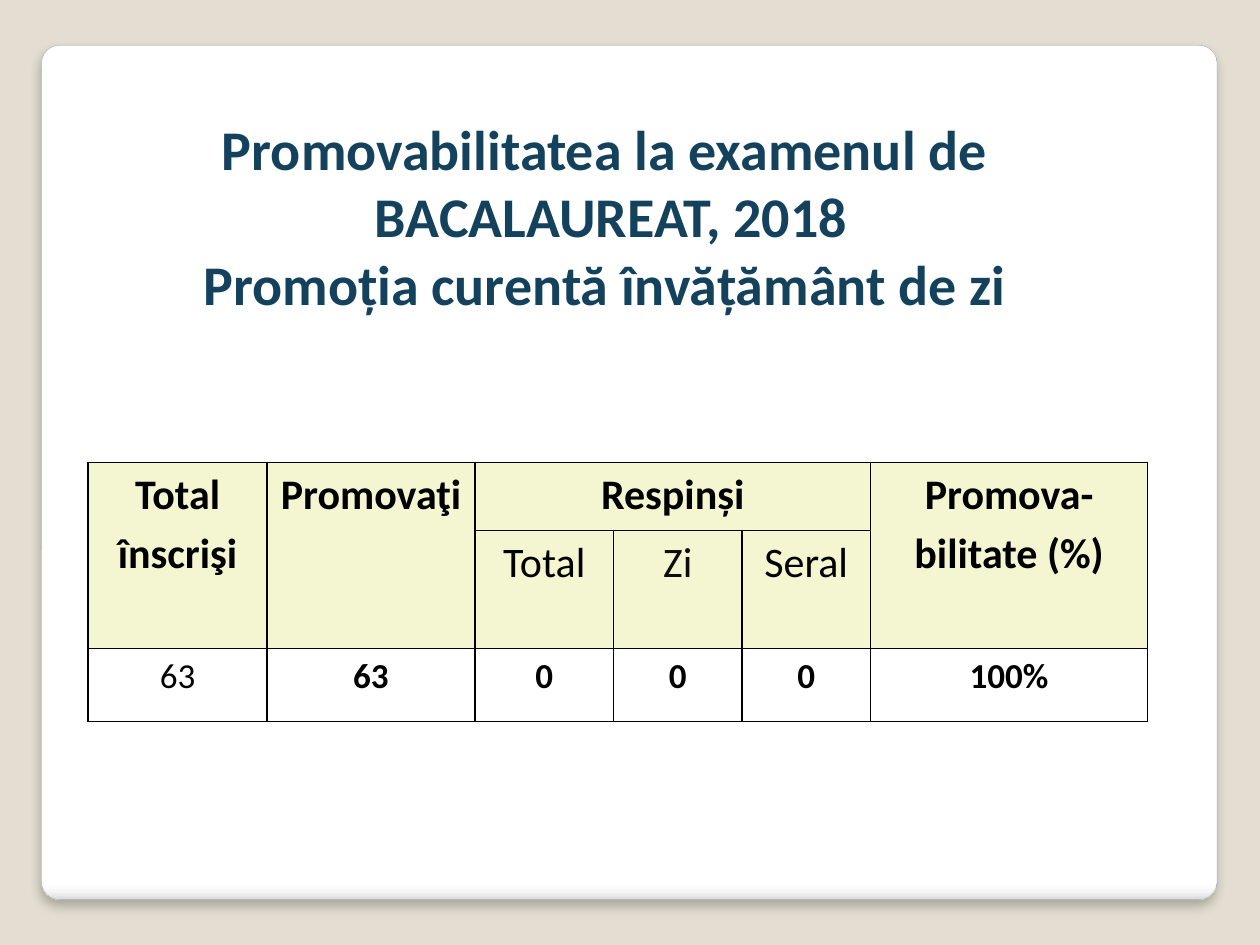
from dataclasses import dataclass

from lxml.etree import SubElement
from pptx import Presentation
from pptx.dml.color import RGBColor
from pptx.enum.shapes import MSO_SHAPE as Shape
from pptx.enum.text import MSO_ANCHOR as Anchor, PP_ALIGN as Align
from pptx.oxml.ns import qn
from pptx.util import Inches, Pt

COLS = [1.42, 1.65, 1.1, 1.02, 1.02, 2.2]
ROWS = [0.54, 0.91, 0.58]
HEADER_FILL = "F4F5D1"
TITLE = ["Promovabilitatea la examenul de", " BACALAUREAT, 2018",
         "Promoția curentă învățământ de zi"]


@dataclass
class Cell:
    row: int
    col: int
    text: str
    rows: int = 1
    cols: int = 1
    bold: bool = True
    size: int = 24
    color: str = "000000"
    fill: str | None = HEADER_FILL


HEADER = [
    Cell(0, 0, "Total înscrişi", rows=2),
    Cell(0, 1, "Promovaţi", rows=2),
    Cell(0, 2, "Respinși", cols=3),
    Cell(0, 5, "Promova-bilitate (%)", rows=2),
    Cell(1, 2, "Total", bold=False),
    Cell(1, 3, "Zi", bold=False, color="0D0D0D"),
    Cell(1, 4, "Seral", bold=False),
]
RESULTS = [Cell(2, col, text, bold=col > 0, size=20, fill=None)
           for col, text in enumerate(["63", "63", "0", "0", "0", "100%"])]


def rgb(color: str) -> RGBColor:
    return RGBColor.from_string(color)


def write(p, text: str, size: int, color: str, bold: bool) -> None:
    p.alignment = Align.CENTER
    r = p.add_run()
    r.text = text
    for name, value in dict(name="Calibri", size=Pt(size), bold=bold).items():
        setattr(r.font, name, value)
    r.font.color.rgb = rgb(color)


def add_color(parent, color: str):
    return SubElement(parent, qn("a:srgbClr"), val=color)


def add_panel(s) -> None:
    """Rounded white panel with a shaded lower edge and a soft shadow."""
    sp = s.shapes.add_shape(Shape.ROUNDED_RECTANGLE, Inches(0.33), Inches(0.36),
                            Inches(9.33), Inches(6.78))
    sp.adjustments[0] = 0.021
    sp.fill.gradient()
    sp.fill.gradient_angle = 270
    stops = sp._element.spPr.find(".//" + qn("a:gsLst"))
    for stop in list(stops):
        stops.remove(stop)
    for pos, color in [(0, "FFFFFF"), (98, "FFFFFF"), (99, "F7F7F7"), (100, "DADADA")]:
        add_color(SubElement(stops, qn("a:gs"), pos=str(pos * 1000)), color)
    sp.line.color.rgb = rgb("A4A4A4")
    sp.line.width = Pt(0.16)
    sp.shadow.inherit = False
    effects = sp._element.spPr.find(qn("a:effectLst"))
    shadow = SubElement(effects, qn("a:outerShdw"), blurRad=str(Pt(6)), dist=str(Pt(4)),
                        dir="5400000", algn="t", rotWithShape="0")
    SubElement(add_color(shadow, "000000"), qn("a:alpha"), val="25000")


def add_title(s) -> None:
    tf = s.shapes.add_textbox(Inches(0.51), Inches(-0.25), Inches(8.58), Inches(3.1)).text_frame
    tf.word_wrap = True
    tf.vertical_anchor = Anchor.MIDDLE
    tf.margin_top = Inches(0.87)
    for i, line in enumerate(TITLE):
        p = tf.add_paragraph() if i else tf.paragraphs[0]
        write(p, line, 32, "14425D", True)


def set_borders(cell) -> None:
    tc_pr = cell._tc.get_or_add_tcPr()
    for i, side in enumerate(["lnL", "lnR", "lnT", "lnB"]):
        ln = tc_pr.makeelement(qn("a:" + side), {"w": str(Pt(1))})
        tc_pr.insert(i, ln)
        add_color(SubElement(ln, qn("a:solidFill")), "000000")


def fill_cell(table, c: Cell) -> None:
    cell = table.cell(c.row, c.col)
    if c.rows > 1 or c.cols > 1:
        cell.merge(table.cell(c.row + c.rows - 1, c.col + c.cols - 1))
    margins = dict(margin_left=0.07, margin_right=0.07, margin_top=0, margin_bottom=0)
    for name, value in margins.items():
        setattr(cell, name, Inches(value))
    p = cell.text_frame.paragraphs[0]
    p.line_spacing = 1.15
    write(p, c.text, c.size, c.color, c.bold)
    for row in range(c.row, c.row + c.rows):
        for col in range(c.col, c.col + c.cols):
            part = table.cell(row, col)
            if c.fill:
                part.fill.solid()
                part.fill.fore_color.rgb = rgb(c.fill)
            else:
                part.fill.background()
            set_borders(part)


def add_results(s) -> None:
    table = s.shapes.add_table(len(ROWS), len(COLS), Inches(0.7), Inches(3.67),
                               Inches(sum(COLS)), Inches(sum(ROWS))).table
    table.first_row = table.horz_banding = False
    for column, width in zip(table.columns, COLS):
        column.width = Inches(width)
    for row, height in zip(table.rows, ROWS):
        row.height = Inches(height)
    for c in HEADER + RESULTS:
        fill_cell(table, c)


def main() -> None:
    prs = Presentation()
    prs.slide_width, prs.slide_height = Inches(10), Inches(7.5)
    s = prs.slides.add_slide(prs.slide_layouts[6])
    s.background.fill.solid()
    s.background.fill.fore_color.rgb = rgb("E3DED1")
    add_panel(s)
    add_results(s)
    add_title(s)
    prs.save("out.pptx")


if __name__ == "__main__":
    main()
